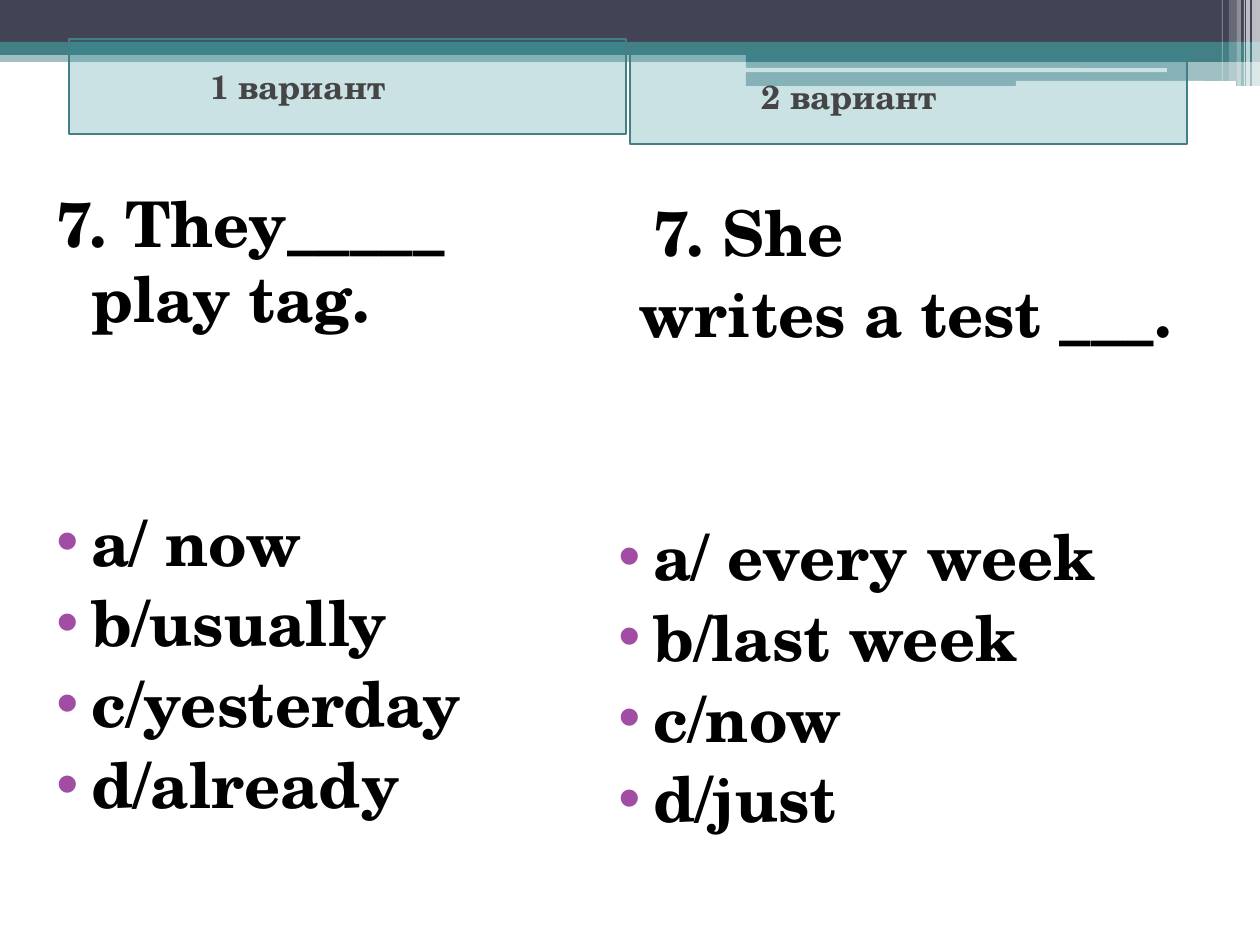
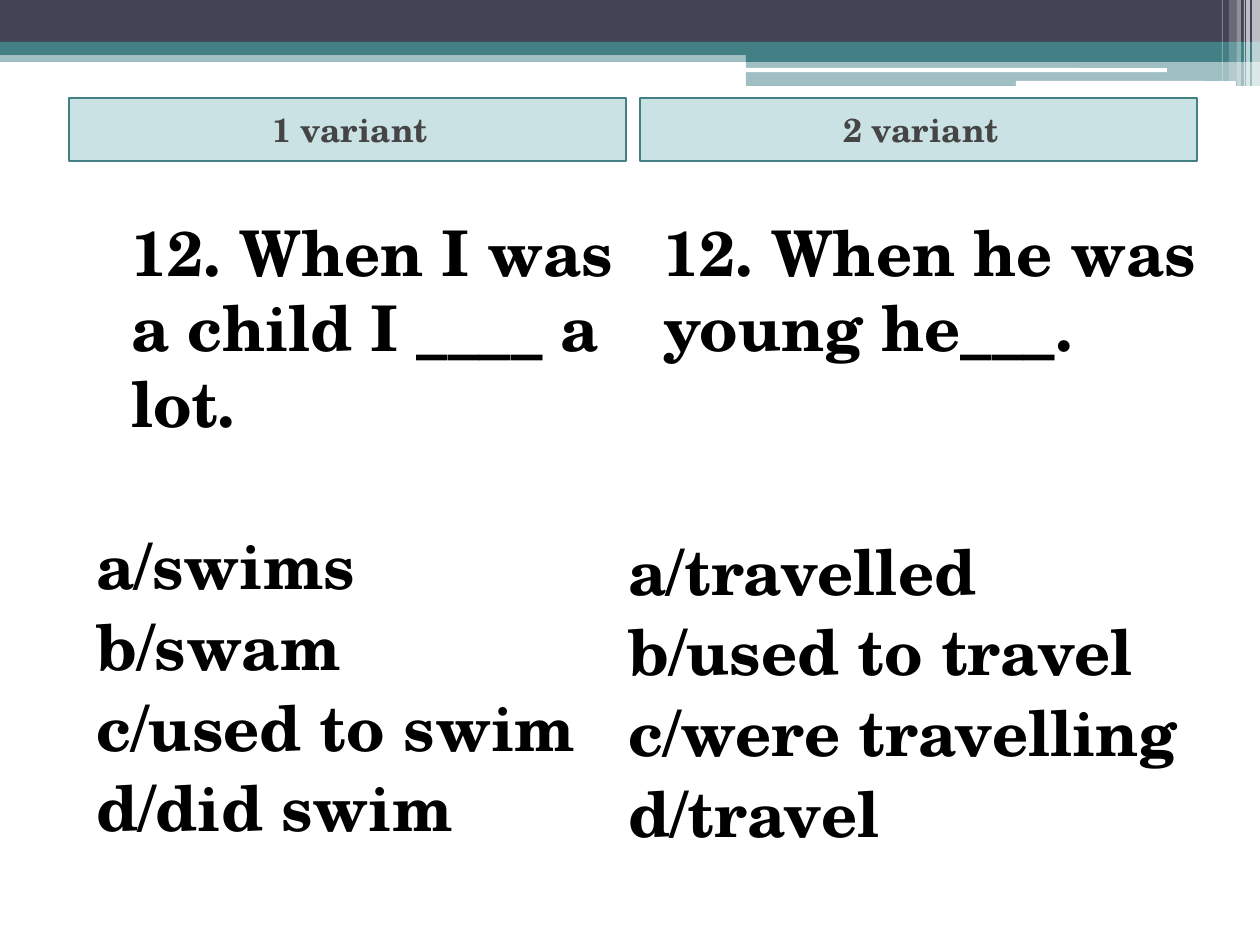
from pptx import Presentation, util as u
from pptx.dml.color import RGBColor
from pptx.enum import shapes, text
from pptx.oxml.ns import qn
from lxml import etree

PX = 914400 / 126
FONT = "TeX Gyre Schola"
DARK = RGBColor(0x42, 0x44, 0x56)
TEAL = RGBColor(0x43, 0x80, 0x86)
PALE = RGBColor(0x32, 0x8E, 0x97)
WHITE = RGBColor(0xFF, 0xFF, 0xFF)
BLACK = RGBColor(0, 0, 0)
GREY = RGBColor(0x45, 0x45, 0x45)
PURPLE = RGBColor(0xA0, 0x4D, 0xA3)

HEADER = {"name": FONT, "size": u.Pt(19), "bold": True}
BODY = {"name": FONT, "size": u.Pt(36), "bold": True}
GAP = 3        # points between paragraphs
LINE = 46.4    # points taken by one skipped line
INDENT, HANG = 50, -35

RECT = shapes.MSO_SHAPE.RECTANGLE
ROUND = shapes.MSO_SHAPE.ROUNDED_RECTANGLE

# kind, box, colour, opacity in percent
BANDS = [
    (RECT, (0, 50, 1260, 12), TEAL, 50),
    (RECT, (0, 0, 1260, 42), DARK, 100),
    (RECT, (0, 42, 1260, 13), TEAL, 100),
    (RECT, (746, 49, 514, 13), TEAL, 100),
    (RECT, (746, 61, 514, 25), TEAL, 50),
    (ROUND, (745, 68, 422, 4), WHITE, 100),
    (ROUND, (1016, 81, 220, 5), WHITE, 100),
]
# left, width, height, opacity in percent
STRIPES = [(1252, 8, 86, 65), (1246, 4, 86, 65), (1244, 1, 86, 60),
           (1237, 4, 86, 40), (1229, 8, 81, 20), (1222, 1, 81, 30)]


def px(n):
    return u.Emu(round(n * PX))


def add_block(slide, kind, box, color, opacity=100):
    sp = slide.shapes.add_shape(kind, *map(px, box))
    sp.shadow.inherit = False
    sp.fill.solid()
    sp.fill.fore_color.rgb = color
    sp.line.fill.background()
    if opacity < 100:
        clr = sp.element.spPr.find(qn("a:solidFill"))[0]
        etree.SubElement(clr, qn("a:alpha"), val=str(opacity * 1000))
    return sp


def set_indent(p, left, first):
    pPr = p._p.get_or_add_pPr()
    pPr.set("marL", str(px(left)))
    pPr.set("indent", str(px(first)))
    return pPr


def add_bullet(pPr):
    clr = etree.SubElement(pPr, qn("a:buClr"))
    etree.SubElement(clr, qn("a:srgbClr"), val=str(PURPLE))
    etree.SubElement(pPr, qn("a:buFont"), typeface="Arial")
    etree.SubElement(pPr, qn("a:buChar"), char="•")


def write(p, words, style, color):
    r = p.add_run()
    r.text = words
    for key, value in style.items():
        setattr(r.font, key, value)
    r.font.color.rgb = color


def draw_bands(slide):
    for band in BANDS:
        add_block(slide, *band)
    for left, width, height, opacity in STRIPES:
        add_block(slide, RECT, (left, 0, width, height), WHITE, opacity)


def draw_header(slide, box, words, right_inset=13):
    sp = add_block(slide, RECT, box, PALE, 25)
    sp.line.color.rgb = TEAL
    sp.line.width = u.Pt(1)
    tf = sp.text_frame
    tf.word_wrap = True
    tf.vertical_anchor = text.MSO_ANCHOR.MIDDLE
    tf.margin_right = px(right_inset)
    p = tf.paragraphs[0]
    p.alignment = text.PP_ALIGN.CENTER
    set_indent(p, 6, 0)
    write(p, words, HEADER, GREY)


def draw_question(slide, box, question, options, skipped, bullets):
    """question: (words, first-line indent) pairs; skipped: lines left open before the options."""
    tf = slide.shapes.add_textbox(*map(px, box)).text_frame
    tf.word_wrap = True
    lines = question + [(option, HANG) for option in options]
    for i, (words, first) in enumerate(lines):
        p = tf.add_paragraph() if i else tf.paragraphs[0]
        if i:
            extra = skipped * LINE if i == len(question) else 0
            p.space_before = u.Pt(GAP + extra)
        pPr = set_indent(p, INDENT, first)
        if bullets and i >= len(question):
            add_bullet(pPr)
        write(p, words, BODY, BLACK)


def add_test_slide(prs, headers, questions, bullets):
    slide = prs.slides.add_slide(prs.slide_layouts[6])
    draw_bands(slide)
    for header in headers:
        draw_header(slide, *header)
    for question in questions:
        draw_question(slide, *question, bullets)


def main():
    prs = Presentation()
    prs.slide_width, prs.slide_height = px(1260), px(945)
    add_test_slide(
        prs,
        [((69, 39, 557, 95), "1 вариант", 118),
         ((630, 49, 557, 95), "2 вариант", 137)],
        [((29, 178, 571, 673), [("7. They_____ play tаg.", HANG)],
          ["a/ now", "b/usually", "c/yesterday", "d/already"], 2),
         ((591, 187, 630, 664), [("7. She", 0), ("writes a test ___.", -15)],
          ["a/ every week", "b/last week", "c/now", "d/just"], 2)],
        bullets=True)
    add_test_slide(
        prs,
        [((69, 98, 557, 63), "1 variant"),
         ((640, 98, 557, 63), "2 variant")],
        [((69, 207, 560, 679), [("12. When I was a child I ____ a lot.", 0)],
          ["a/swims", "b/swam", "c/used to swim", "d/did swim"], 1),
         ((601, 207, 630, 679), [("12. When he was young he___.", 0)],
          ["a/travelled", "b/used to travel", "c/were travelling", "d/travel"], 2)],
        bullets=False)
    prs.save("out.pptx")


if __name__ == "__main__":
    main()
